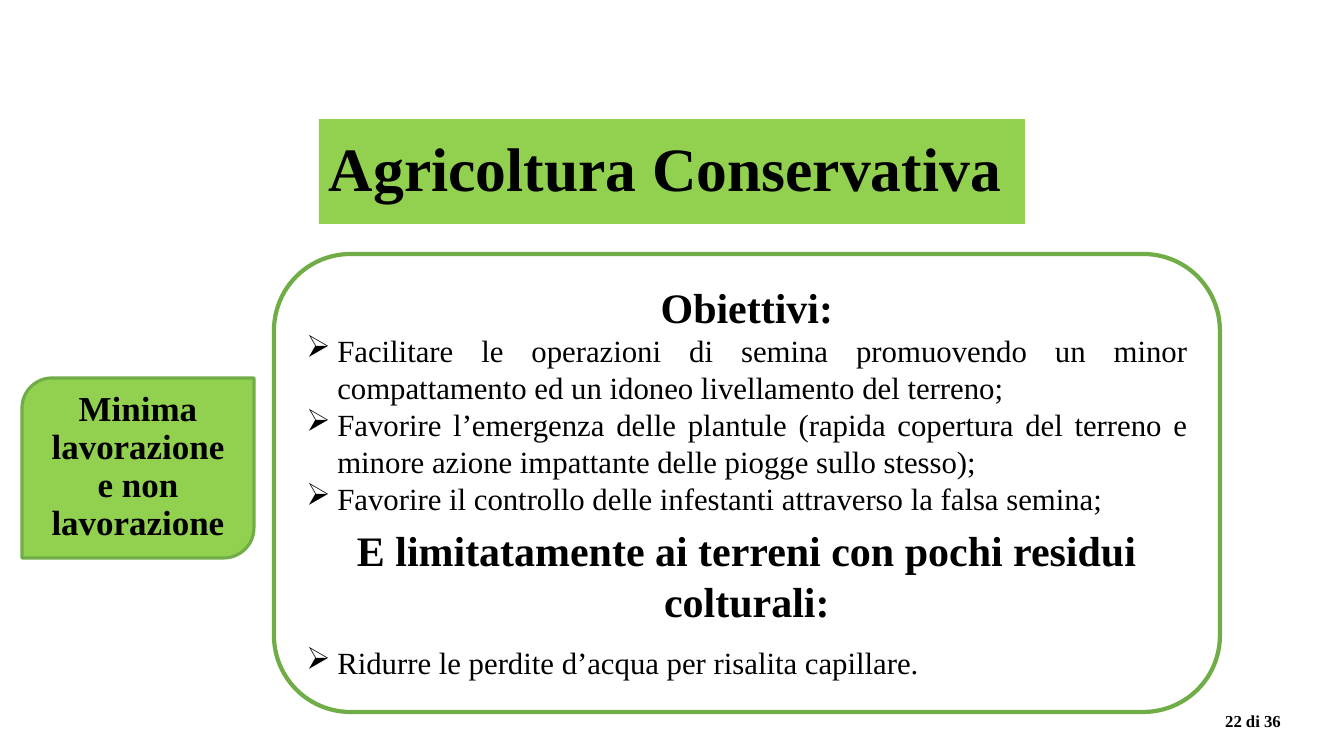
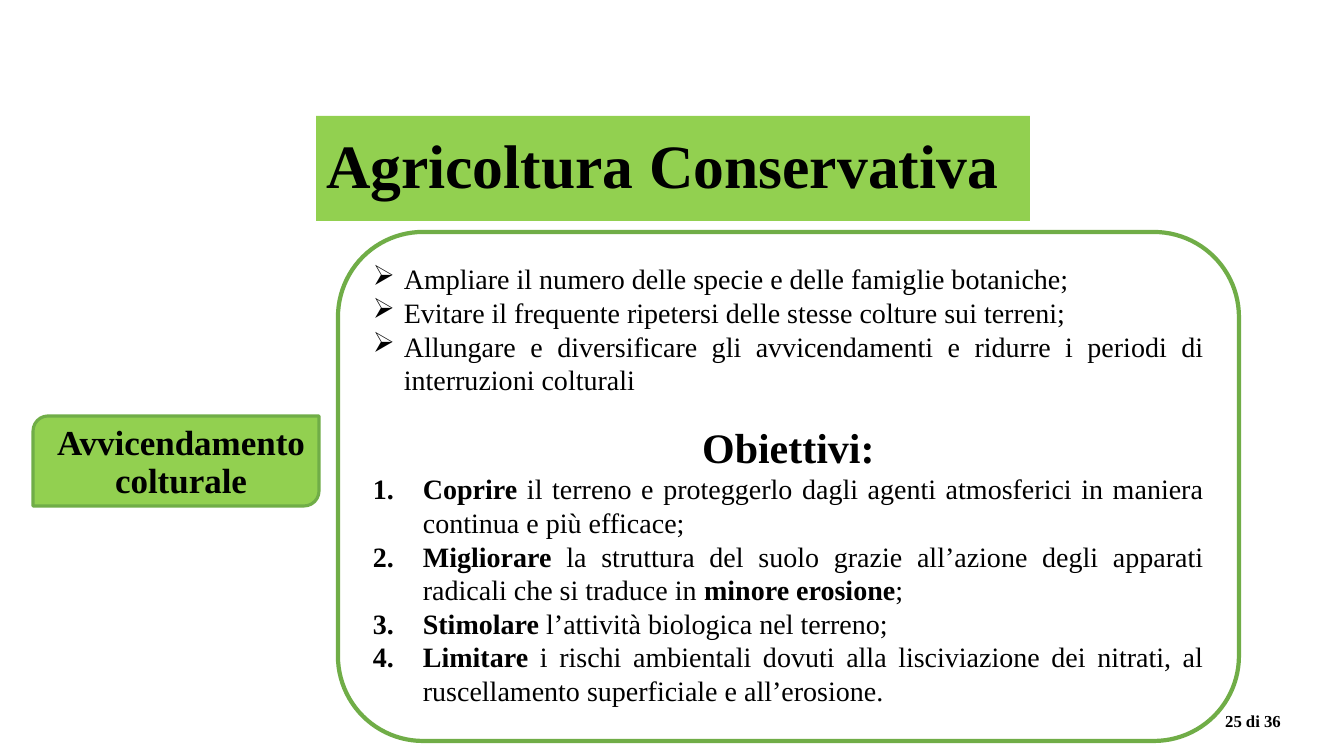
from lxml import etree
from pptx import Presentation
from pptx.dml.color import RGBColor
from pptx.enum.shapes import MSO_SHAPE
from pptx.enum.text import MSO_ANCHOR, MSO_AUTO_SIZE, PP_ALIGN
from pptx.oxml.ns import qn
from pptx.oxml.xmlchemy import OxmlElement
from pptx.util import Pt

LEFT, CENTER, RIGHT, JUSTIFY = PP_ALIGN.LEFT, PP_ALIGN.CENTER, PP_ALIGN.RIGHT, PP_ALIGN.JUSTIFY
TOP, MIDDLE = MSO_ANCHOR.TOP, MSO_ANCHOR.MIDDLE
NO_AUTOFIT = MSO_AUTO_SIZE.NONE
DIAGONAL = MSO_SHAPE.ROUND_2_DIAG_RECTANGLE

# Shared look
EMU_PER_PX = 914400 / 100.8
FONT = "Times New Roman"
BLACK, LIGHT_GREEN, GREEN = "000000", "92D050", "70AD47"
CORNER = 0.167
TITLE = "Agricoltura Conservativa"
TOTAL = "di 36"

# Paragraph styles: left margin, first-line indent (px), bullet tag with attributes
HEADING = {"alignment": CENTER, "size": 30, "bold": True}
ARROW = {"alignment": JUSTIFY, "margin": 31, "indent": -31,
         "bullet": ("a:buChar", {"char": "Ø"})}
NUMBER = {"alignment": JUSTIFY, "margin": 50, "indent": -50, "size": 20,
          "bullet": ("a:buAutoNum", {"type": "arabicPeriod"})}
ARROW_22, ARROW_20 = ARROW | {"size": 22}, ARROW | {"size": 20}
TITLE_STYLE = {"size": 44, "bold": True, "line_spacing": 0.9}
LABEL_STYLE = {"alignment": CENTER, "size": 25, "bold": True, "line_spacing": 0.9}
FOOTER_STYLE = {"size": 12, "bold": True}

# Asterisks enclose bold words
SLIDES = [
    {
        "number": "22",
        "title_box": (319, 119, 706, 105),
        "label": "Minima lavorazione e non lavorazione",
        "label_box": (22, 378, 232, 180),
        "label_inset": 10,
        "label_style": LABEL_STYLE,
        "frame_box": (274, 254, 946, 458),
        "content": [
            ("Obiettivi:", HEADING),
            ("Facilitare le operazioni di semina promuovendo un minor compattamento "
             "ed un idoneo livellamento del terreno;", ARROW_22),
            ("Favorire l’emergenza delle plantule (rapida copertura del terreno e "
             "minore azione impattante delle piogge sullo stesso);", ARROW_22),
            ("Favorire il controllo delle infestanti attraverso la falsa semina;",
             ARROW_22 | {"space_after": Pt(6)}),
            ("E limitatamente ai terreni con pochi residui colturali:", HEADING),
            ("Ridurre le perdite d’acqua per risalita capillare.",
             ARROW_22 | {"line_spacing": 1.5}),
        ],
    },
    {
        "number": "25",
        "title_box": (316, 116, 714, 105),
        "label": "Avvicendamento colturale",
        "label_box": (33, 416, 286, 90),
        "label_inset": 0,
        "label_style": LABEL_STYLE | {"margin": 10},
        "frame_box": (338, 232, 901, 509),
        "content": [
            ("Ampliare il numero delle specie e delle famiglie botaniche;", ARROW_20),
            ("Evitare il frequente ripetersi delle stesse colture sui terreni;", ARROW_20),
            ("Allungare e diversificare gli avvicendamenti e ridurre i periodi di "
             "interruzioni colturali", ARROW_20),
            ("Obiettivi:", HEADING | {"line_spacing": 1.5}),
            ("*Coprire* il terreno e proteggerlo dagli agenti atmosferici in maniera "
             "continua e più efficace;", NUMBER),
            ("*Migliorare* la struttura del suolo grazie all’azione degli apparati "
             "radicali che si traduce in *minore erosione*;", NUMBER),
            ("*Stimolare* l’attività biologica nel terreno;", NUMBER),
            ("*Limitare* i rischi ambientali dovuti alla lisciviazione dei nitrati, al "
             "ruscellamento superficiale e all’erosione.", NUMBER),
        ],
    },
]


def style_box(shape, box, preset=None, fill=None, line_width=None):
    """Place a shape; optionally give it an outline preset, a fill and a green line."""
    for name, value in zip(("left", "top", "width", "height"), box):
        setattr(shape, name, round(value * EMU_PER_PX))
    if not preset:
        return
    if shape.is_placeholder:
        geometry = OxmlElement("a:prstGeom")
        geometry.set("prst", preset)
        etree.SubElement(geometry, qn("a:avLst"))
        shape.element.spPr.find(qn("a:xfrm")).addnext(geometry)
    shape.shadow.inherit = False
    shape.adjustments[0] = CORNER
    if fill:
        shape.fill.solid()
        shape.fill.fore_color.rgb = RGBColor.from_string(fill)
    else:
        shape.fill.background()
    if line_width:
        shape.line.color.rgb = RGBColor.from_string(GREEN)
        shape.line.width = Pt(line_width)
    else:
        shape.line.fill.background()


def write_text(shape, content, anchor=TOP, inset=10, wrap=True):
    """Fill a shape with (text, style) paragraphs."""
    frame = shape.text_frame
    side, edge = round(inset * EMU_PER_PX), round(5 * EMU_PER_PX)
    settings = {"word_wrap": wrap, "auto_size": NO_AUTOFIT, "vertical_anchor": anchor,
                "margin_left": side, "margin_right": side,
                "margin_top": edge, "margin_bottom": edge}
    for name, value in settings.items():
        setattr(frame, name, value)
    for index, (text, style) in enumerate(content):
        paragraph = frame.add_paragraph() if index else frame.paragraphs[0]
        properties = paragraph._p.get_or_add_pPr()
        properties.set("marL", str(round(style.get("margin", 0) * EMU_PER_PX)))
        properties.set("indent", str(round(style.get("indent", 0) * EMU_PER_PX)))
        tag, attributes = style.get("bullet", ("a:buNone", {}))
        if tag == "a:buChar":
            etree.SubElement(properties, qn("a:buFont"), typeface="Wingdings")
        etree.SubElement(properties, qn(tag), attributes)
        paragraph_values = {"alignment": LEFT, "line_spacing": 1.0,
                            "space_before": Pt(0), "space_after": Pt(0)}
        for name, value in paragraph_values.items():
            setattr(paragraph, name, style.get(name, value))
        for part, words in enumerate(text.split("*")):
            if not words:
                continue
            run = paragraph.add_run()
            run.text = words
            run.font.color.rgb = RGBColor.from_string(BLACK)
            font_values = {"name": FONT, "size": Pt(style["size"]),
                           "bold": style.get("bold", part % 2 == 1)}
            for name, value in font_values.items():
                setattr(run.font, name, value)


presentation = Presentation()
presentation.slide_width = round(1344 * EMU_PER_PX)
presentation.slide_height = round(756 * EMU_PER_PX)
layout = presentation.slide_layouts[1]

for position, data in enumerate(SLIDES):
    slide = presentation.slides.add_slide(layout)

    # Page total, kept once on the master
    if position == 0:
        total = slide.shapes.add_textbox(0, 0, 0, 0)
        style_box(total, (1236, 706, 67, 30))
        write_text(total, [(TOTAL, FOOTER_STYLE)], wrap=False)
        total.element.nvSpPr.cNvPr.set("id", "20")
        presentation.slide_master.shapes.element.append(total.element)

    # Title band
    title = slide.shapes.title
    style_box(title, data["title_box"], "round2DiagRect", LIGHT_GREEN)
    write_text(title, [(TITLE, TITLE_STYLE)], MIDDLE)

    # Rounded frame with the list
    body = slide.placeholders[1]
    style_box(body, data["frame_box"], "roundRect", line_width=3)
    write_text(body, data["content"])

    # Side label
    label = slide.shapes.add_shape(DIAGONAL, 0, 0, 0, 0)
    style_box(label, data["label_box"], "round2DiagRect", LIGHT_GREEN, 2.25)
    write_text(label, [(data["label"], data["label_style"])], inset=data["label_inset"])

    # Page number
    number = slide.shapes.add_textbox(0, 0, 0, 0)
    style_box(number, (950, 701, 302, 40))
    write_text(number, [(data["number"], FOOTER_STYLE | {"alignment": RIGHT})], MIDDLE)

presentation.save("out.pptx")
